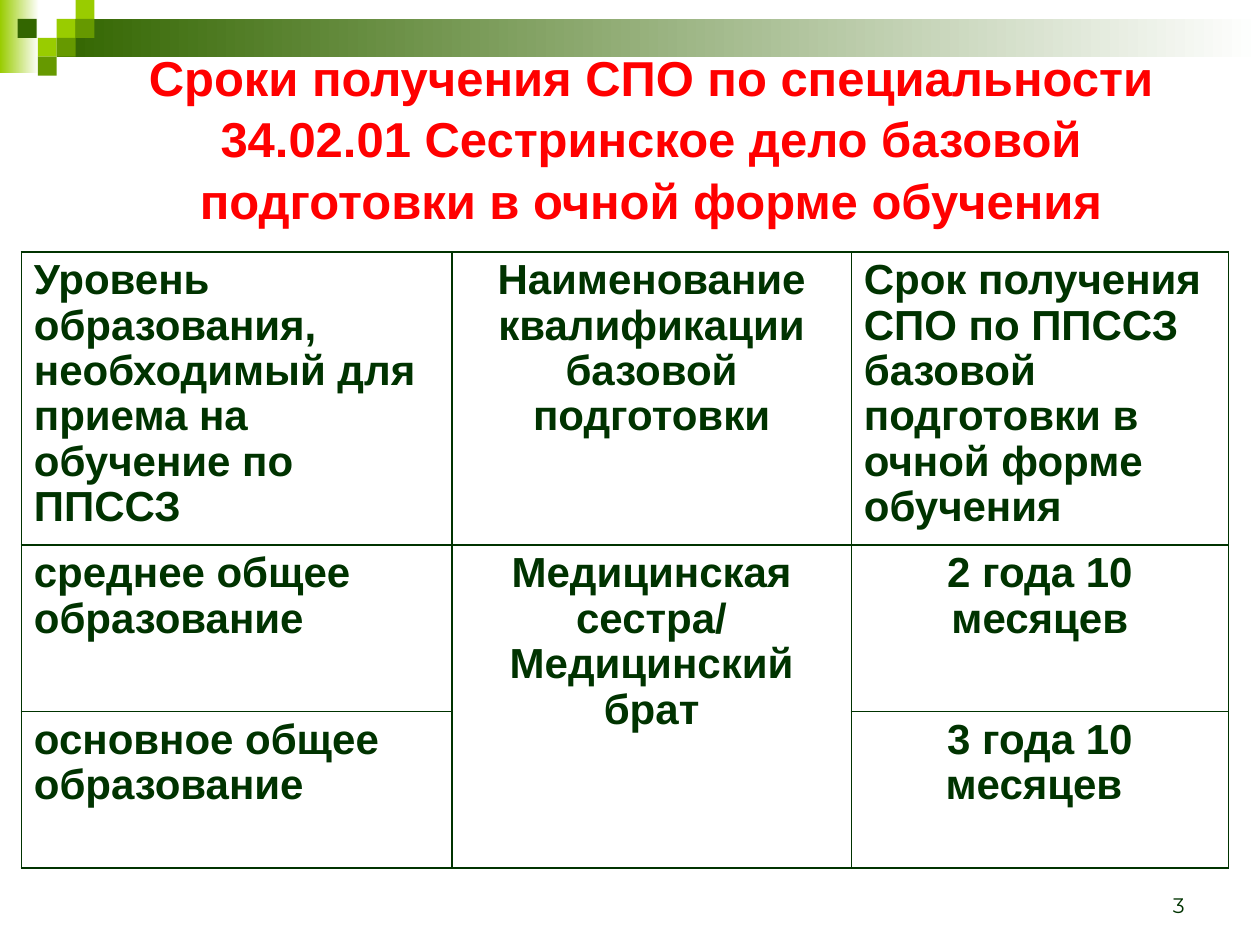
import pptx
import pptx.util
import pptx.dml.color
import pptx.enum.shapes
import pptx.enum.text
import pptx.oxml
import pptx.oxml.ns

Pt = pptx.util.Pt
ALIGN = pptx.enum.text.PP_ALIGN
HUES = {"lime": "99CC00", "leaf": "669900", "moss": "336600",
        "ink": "003300", "red": "FF0000", "white": "FFFFFF"}


def tone(name):
    return pptx.dml.color.RGBColor.from_string(HUES[name])


def style(para, size, hue, align, face="Arial", bold=True):
    para.alignment = align
    para.font.size = Pt(size)
    para.font.name = face
    para.font.bold = bold
    para.font.color.rgb = tone(hue)


deck = pptx.Presentation()
deck.slide_width, deck.slide_height = Pt(720), Pt(540)
slide = deck.slides.add_slide(deck.slide_layouts[5])

# Corner ornament: two fading bars, then small squares
tile = 10.8
blocks = [(0, 0, 22.3, 41.8, "lime", True),
          (32.4, tile, 687.6, 21.6, "moss", True)]
for left, row, hue in [(32.4, 1, "lime"), (43.2, 0, "lime"), (43.2, 1, "leaf"),
                       (21.6, 2, "lime"), (10.1, 1, "moss"), (32.4, 2, "leaf"),
                       (21.6, 3, "leaf")]:
    blocks.append((left, row * tile, tile, tile, hue, False))
for left, top, width, height, hue, fade in blocks:
    block = slide.shapes.add_shape(pptx.enum.shapes.MSO_SHAPE.RECTANGLE,
                                   Pt(left), Pt(top), Pt(width), Pt(height))
    block.shadow.inherit = False
    block.line.fill.background()
    if fade:
        block.fill.gradient()
        block.fill.gradient_angle = 0
        for stop, name, spot in zip(block.fill.gradient_stops, (hue, "white"), (0, 1)):
            stop.color.rgb = tone(name)
            stop.position = spot
    else:
        block.fill.solid()
        block.fill.fore_color.rgb = tone(hue)

# Title
title = slide.shapes.title
title.left, title.top, title.width, title.height = Pt(42), Pt(24), Pt(660), Pt(108.7)
frame = title.text_frame
frame.word_wrap = True
frame.auto_size = pptx.enum.text.MSO_AUTO_SIZE.NONE
frame.vertical_anchor = pptx.enum.text.MSO_ANCHOR.MIDDLE
frame.text = ("Сроки получения СПО по специальности 34.02.01 Сестринское дело "
              "базовой подготовки в очной форме обучения")
style(frame.paragraphs[0], 28, "red", ALIGN.CENTER)
frame.paragraphs[0].line_spacing = 1.04

# Table of study terms
rows = [["Уровень образования, необходимый для приема на обучение по ППССЗ",
         "Наименование квалификации базовой подготовки",
         "Срок получения СПО по ППССЗ базовой подготовки в очной форме обучения"],
        ["среднее общее образование", "Медицинская сестра/ Медицинский брат",
         "2 года 10 месяцев"],
        ["основное общее образование", "", "3 года 10 месяцев "]]
widths, heights = [246, 228.3, 215.5], [167.5, 95, 89.5]
grid = slide.shapes.add_table(3, 3, Pt(12.2), Pt(144), Pt(sum(widths)),
                              Pt(sum(heights))).table
grid.first_row = grid.horz_banding = False
for col, width in zip(grid.columns, widths):
    col.width = Pt(width)
for row, height in zip(grid.rows, heights):
    row.height = Pt(height)
grid.cell(1, 1).merge(grid.cell(2, 1))

for r, texts in enumerate(rows):
    for c, text in enumerate(texts):
        cell = grid.cell(r, c)
        if text:
            cell.text = text
            para = cell.text_frame.paragraphs[0]
            left = c == 0 or (r, c) == (0, 2)
            style(para, 24, "ink", ALIGN.LEFT if left else ALIGN.CENTER)
            para.line_spacing = 0.97
        # Borders come before the fill in the cell properties
        props = cell._tc.get_or_add_tcPr()
        for side in ("lnL", "lnR", "lnT", "lnB"):
            props.append(pptx.oxml.parse_xml(
                f'<a:{side} {pptx.oxml.ns.nsdecls("a")} w="{Pt(1)}"><a:solidFill>'
                f'<a:srgbClr val="{HUES["ink"]}"/></a:solidFill></a:{side}>'))
        cell.fill.background()

# Slide number
box = slide.shapes.add_textbox(Pt(516), Pt(492), Pt(168), Pt(36))
box.text_frame.word_wrap = True
box.text_frame.vertical_anchor = pptx.enum.text.MSO_ANCHOR.BOTTOM
box.text_frame.text = "3"
style(box.text_frame.paragraphs[0], 12, "ink", ALIGN.RIGHT, "Montserrat", False)

deck.save("out.pptx")
